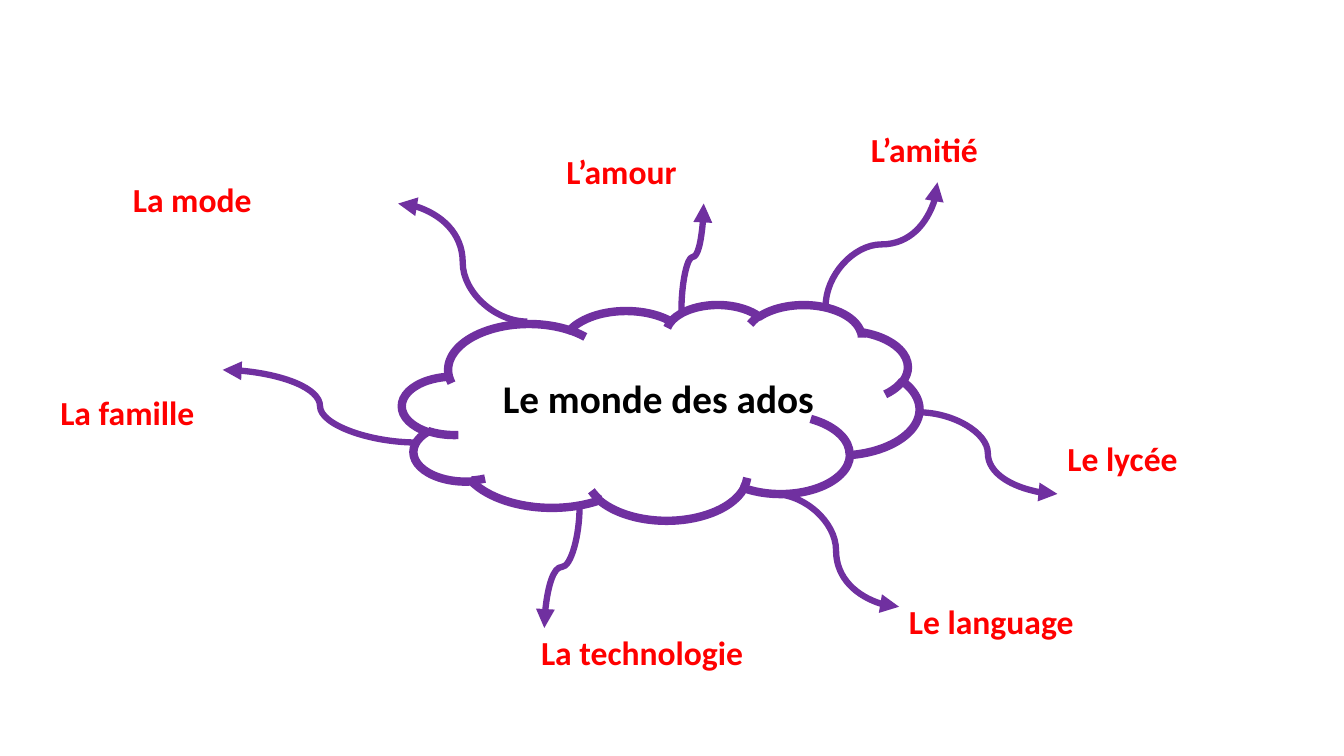
from dataclasses import dataclass
from math import cos, radians, sin

from pptx import Presentation
from pptx.dml.color import RGBColor
from pptx.enum.shapes import MSO_CONNECTOR, MSO_SHAPE
from pptx.enum.text import MSO_AUTO_SIZE
from pptx.oxml.ns import qn
from pptx.slide import Slide
from pptx.util import Pt
from lxml.etree import SubElement

PURPLE = RGBColor(0x70, 0x30, 0xA0)
RED = RGBColor(0xFF, 0x00, 0x00)
BLACK = RGBColor(0x00, 0x00, 0x00)
FONT = "Calibri"
LABEL_HEIGHT = 36.35


@dataclass(frozen=True)
class Theme:
    """A label and the curved arrow leading to it; lengths in points."""
    text: str
    left: float
    top: float
    width: float
    start: tuple[float, float]
    end: tuple[float, float]
    heading: int  # direction in which the arrow leaves the cloud, in degrees


THEMES = [
    Theme("La mode", 87.8, 124.6, 100.1, (376.6, 229.7), (284.4, 145.4), 180),
    Theme("L’amitié", 614.9, 88.6, 92.2, (589.7, 218.9), (669.6, 130.3), 90),
    Theme("La famille", 36, 276.5, 110.9, (298.1, 316.1), (159.1, 264.2), 180),
    Theme("Le lycée", 755.3, 309.6, 94.3, (655.9, 294.5), (755.3, 352.8), 0),
    Theme("L’amour", 397.4, 104.4, 94.3, (486.7, 221.8), (502.6, 145.4), 90),
    Theme("La technologie", 379.4, 447.8, 160.6, (414, 361.4), (388.8, 448.6), 90),
    Theme("Le language", 642.2, 425.5, 133.2, (552.2, 352.8), (642.2, 433.4), 0),
]


def add_cloud(page: Slide) -> None:
    cloud = page.shapes.add_shape(
        MSO_SHAPE.CLOUD, Pt(287.3), Pt(217.4), Pt(369.4), Pt(154.1))
    cloud.shadow.inherit = False
    cloud.fill.background()
    cloud.line.color.rgb = PURPLE
    cloud.line.width = Pt(6)


def add_label(page: Slide, text: str, left: float, top: float, width: float,
              height: float, size: float, color: RGBColor) -> None:
    box = page.shapes.add_textbox(Pt(left), Pt(top), Pt(width), Pt(height))
    frame = box.text_frame
    frame.word_wrap = False
    frame.auto_size = MSO_AUTO_SIZE.SHAPE_TO_FIT_TEXT
    para = frame.paragraphs[0]
    para.text = text
    para.font.name = FONT
    para.font.size = Pt(size)
    para.font.bold = True
    para.font.color.rgb = color


def add_arrow(page: Slide, theme: Theme) -> None:
    # Lay the curve out before rotation, around the same centre
    (x1, y1), (x2, y2) = theme.start, theme.end
    middle_x, middle_y = (x1 + x2) / 2, (y1 + y2) / 2
    cosine, sine = cos(radians(theme.heading)), sin(radians(theme.heading))
    half_x = ((x2 - x1) * cosine + (y2 - y1) * sine) / 2
    half_y = ((y2 - y1) * cosine - (x2 - x1) * sine) / 2
    arrow = page.shapes.add_connector(
        MSO_CONNECTOR.CURVE,
        Pt(middle_x - half_x), Pt(middle_y - half_y),
        Pt(middle_x + half_x), Pt(middle_y + half_y))
    arrow.line.color.rgb = PURPLE
    arrow.line.width = Pt(4.5)

    # Rotation, arrowhead and no shadow
    properties = arrow._element.spPr
    if theme.heading:
        properties.find(qn("a:xfrm")).set("rot", str(theme.heading * 60000))
    SubElement(properties.find(qn("a:ln")), qn("a:tailEnd"), type="triangle")
    SubElement(properties, qn("a:effectLst"))


def main() -> None:
    deck = Presentation()
    deck.slide_width, deck.slide_height = Pt(960), Pt(540)
    page = deck.slides.add_slide(deck.slide_layouts[6])

    # Central idea
    add_cloud(page)
    add_label(page, "Le monde des ados", 352.1, 263.5, 239, 41.2, 28, BLACK)

    # Themes around it
    for theme in THEMES:
        add_arrow(page, theme)
    for theme in THEMES:
        add_label(page, theme.text, theme.left, theme.top, theme.width,
                  LABEL_HEIGHT, 24, RED)

    deck.save("out.pptx")


if __name__ == "__main__":
    main()
